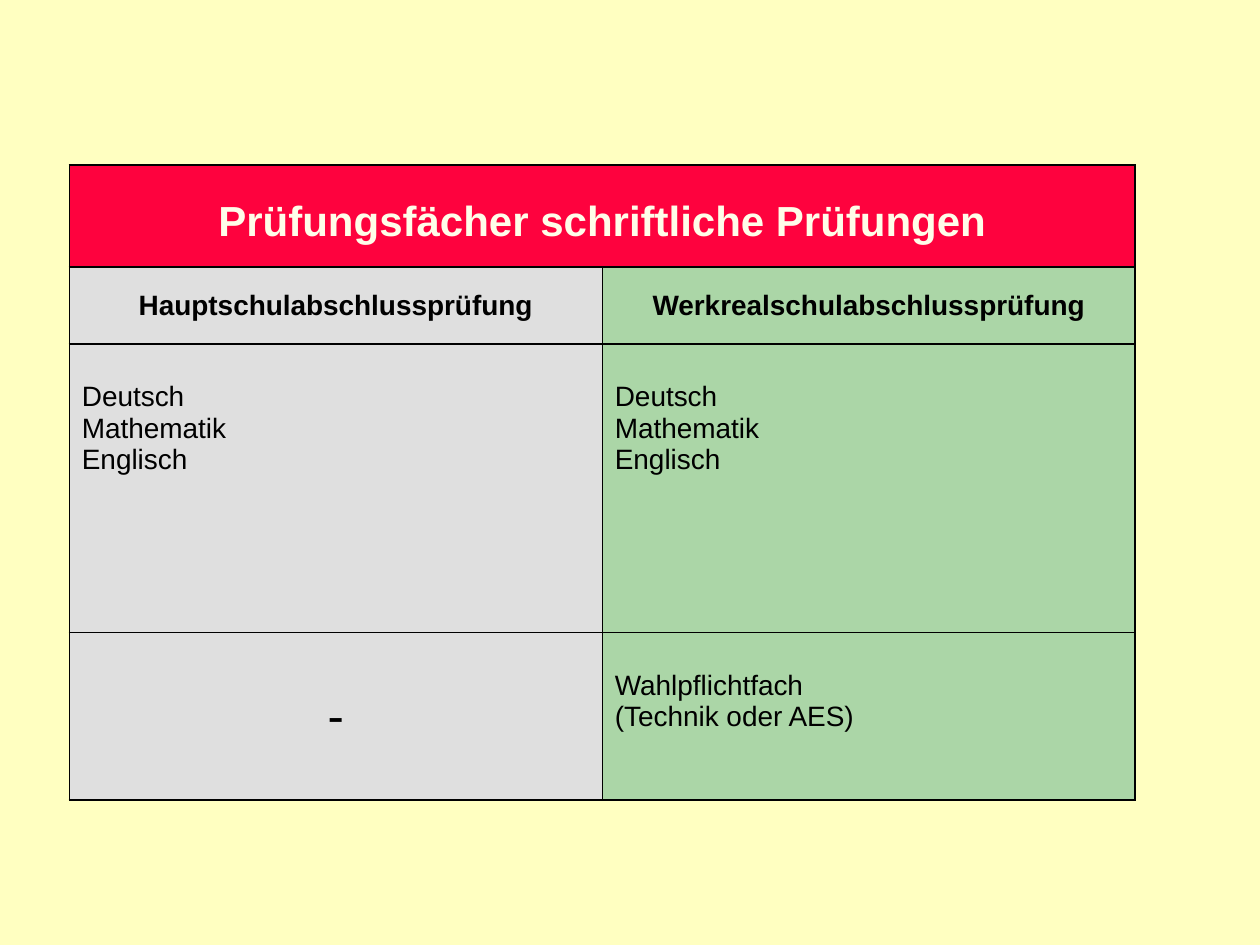
"""Build a slide with a table of the written examination subjects."""
from lxml import etree
from pptx import Presentation
from pptx.dml.color import RGBColor
from pptx.enum import text
from pptx.oxml import ns
from pptx.util import Inches, Pt

BACKGROUND = RGBColor(0xFF, 0xFF, 0xC1)
RED = RGBColor(0xFE, 0x02, 0x3E)
CREAM = RGBColor(0xFF, 0xFD, 0xE9)
GRAY = RGBColor(0xDF, 0xDF, 0xDF)
GREEN = RGBColor(0x59, 0xAF, 0x8F)
BLACK = RGBColor(0, 0, 0)

TITLE = "Prüfungsfächer schriftliche Prüfungen"
HEADINGS = ["Hauptschulabschlussprüfung", "Werkrealschulabschlussprüfung"]
CORE_SUBJECTS = ["Deutsch", "Mathematik", "Englisch"]
ELECTIVE = ["Wahlpflichtfach", "(Technik oder AES)"]

HEADING_FORMAT = {"bold": True, "centered": True}
LIST_FORMAT = {"top": 0.3}
ROWS = [
    (0.81, [([TITLE], {"size": 24, "color": CREAM, "top": 0.14, **HEADING_FORMAT})]),
    (0.61, [([heading], HEADING_FORMAT) for heading in HEADINGS]),
    (2.29, [(CORE_SUBJECTS, LIST_FORMAT)] * 2),
    (1.33, [(["-"], {"size": 28, "centered": True}), (ELECTIVE, LIST_FORMAT)]),
]
COLUMN_FILLS = [(GRAY, 100), (GREEN, 50)]
LEFT, TOP, COLUMN_WIDTH = 0.55, 1.31, 4.23


def write_cell(cell, lines, size=16, color=BLACK, bold=False, centered=False, top=0.05):
    cell.margin_top = Inches(top)
    cell.vertical_anchor = text.MSO_ANCHOR.MIDDLE if centered else text.MSO_ANCHOR.TOP
    cell.text_frame.text = "\n".join(lines)
    for paragraph in cell.text_frame.paragraphs:
        paragraph.alignment = text.PP_ALIGN.CENTER if centered else text.PP_ALIGN.LEFT
        for run in paragraph.runs:
            run.font.name = "Arial"
            run.font.size = Pt(size)
            run.font.bold = bold
            run.font.color.rgb = color


def paint_cell(cell, color, opacity=100):
    cell.fill.solid()
    cell.fill.fore_color.rgb = color
    properties = cell._tc.get_or_add_tcPr()
    if opacity < 100:
        fill_color = properties.find(".//" + ns.qn("a:srgbClr"))
        etree.SubElement(fill_color, ns.qn("a:alpha"), val=str(opacity * 1000))
    for position, side in enumerate(["lnL", "lnR", "lnT", "lnB"]):
        line = etree.Element(ns.qn(f"a:{side}"), w=str(Pt(1)))
        line_fill = etree.SubElement(line, ns.qn("a:solidFill"))
        etree.SubElement(line_fill, ns.qn("a:srgbClr"), val=str(BLACK))
        properties.insert(position, line)


def main():
    presentation = Presentation()
    presentation.slide_width, presentation.slide_height = Inches(10), Inches(7.5)
    slide = presentation.slides.add_slide(presentation.slide_layouts[6])
    slide.background.fill.solid()
    slide.background.fill.fore_color.rgb = BACKGROUND

    columns = len(COLUMN_FILLS)
    height = sum(row_height for row_height, _ in ROWS)
    table = slide.shapes.add_table(
        len(ROWS), columns, Inches(LEFT), Inches(TOP),
        Inches(columns * COLUMN_WIDTH), Inches(height)).table
    table.first_row = table.horz_banding = False
    for column in table.columns:
        column.width = Inches(COLUMN_WIDTH)
    table.cell(0, 0).merge(table.cell(0, columns - 1))

    for row, (row_height, entries) in enumerate(ROWS):
        table.rows[row].height = Inches(row_height)
        for column, fill in enumerate(COLUMN_FILLS):
            paint_cell(table.cell(row, column), *(fill if row else (RED,)))
        for column, (lines, cell_format) in enumerate(entries):
            write_cell(table.cell(row, column), lines, **cell_format)

    presentation.save("out.pptx")


if __name__ == "__main__":
    main()
